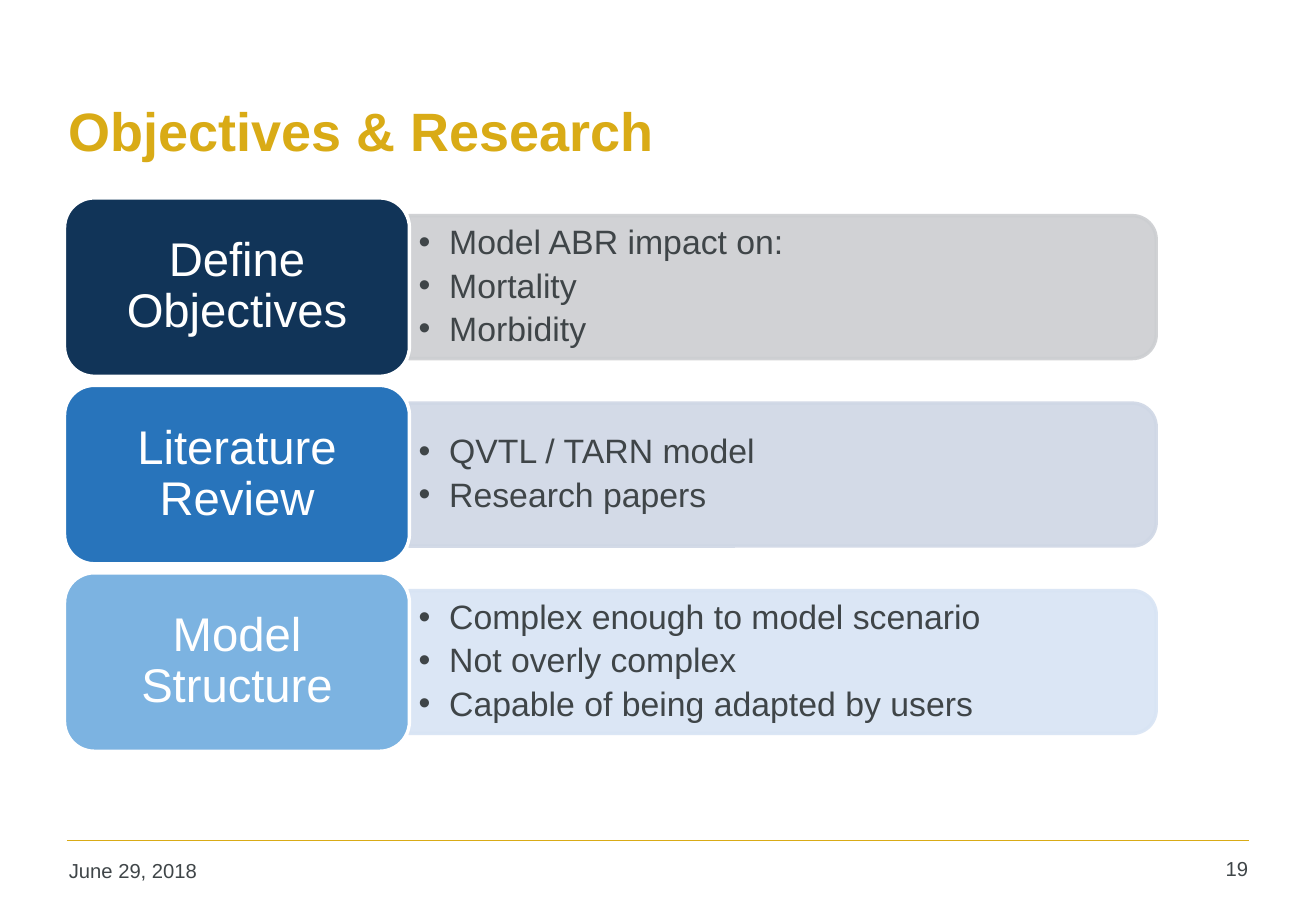
"""Builds the Objectives & Research slide: three labelled rows with bullet panels."""
from lxml import etree
from pptx import Presentation
from pptx.dml.color import RGBColor
from pptx.enum.shapes import MSO_CONNECTOR, MSO_SHAPE
from pptx.enum.text import MSO_ANCHOR, PP_ALIGN
from pptx.oxml.ns import qn
from pptx.util import Cm, Pt

LEFT, CENTER, RIGHT = PP_ALIGN.LEFT, PP_ALIGN.CENTER, PP_ALIGN.RIGHT
TOP, MIDDLE = MSO_ANCHOR.TOP, MSO_ANCHOR.MIDDLE
ROUND_RECT, ROUND_2_SAME = MSO_SHAPE.ROUNDED_RECTANGLE, MSO_SHAPE.ROUND_2_SAME_RECTANGLE
STRAIGHT = MSO_CONNECTOR.STRAIGHT

FONT = "Arial"
COLORS = {
    "gold": "D9AB16", "text": "3F4548", "white": "FFFFFF",
    "navy": "113458", "blue": "2874BB", "sky": "7CB3E1",
    "gray": "CCCED1", "mist": "CFD7E5", "ice": "D8E4F4",
}
ROWS = [
    ("Define Objectives", "navy", "gray",
     ["Model ABR impact on:", "Mortality", "Morbidity"]),
    ("Literature Review", "blue", "mist",
     ["QVTL / TARN model", "Research papers"]),
    ("Model Structure", "sky", "ice",
     ["Complex enough to model scenario", "Not overly complex",
      "Capable of being adapted by users"]),
]
ROW_TOP, ROW_PITCH = 4.14, 3.92
LABEL_LEFT, LABEL_W, LABEL_H = 1.35, 7.21, 3.73
PANEL_LEFT, PANEL_W, PANEL_H = 8.55, 15.62, 2.99
BULLETS_W, BULLETS_H = 15.47, 2.7


def rgb(name):
    return RGBColor.from_string(COLORS[name])


def set_frame(tf, anchor, inset_x, inset_y):
    tf.word_wrap = True
    tf.vertical_anchor = anchor
    tf.margin_left = tf.margin_right = Cm(inset_x)
    tf.margin_top = tf.margin_bottom = Cm(inset_y)


def add_run(p, text, size, color, bold=False):
    r = p.add_run()
    r.text = text
    r.font.name = FONT
    r.font.size = Pt(size)
    r.font.bold = bold
    r.font.color.rgb = rgb(color)


def add_text(s, box, text, size, color, align=LEFT, anchor=TOP, bold=False):
    tf = s.shapes.add_textbox(*map(Cm, box)).text_frame
    set_frame(tf, anchor, 0.25, 0.13)
    p = tf.paragraphs[0]
    p.alignment = align
    add_run(p, text, size, color, bold)


def add_box(s, kind, box, fill, line):
    sp = s.shapes.add_shape(kind, *map(Cm, box))
    sp.shadow.inherit = False
    sp.fill.solid()
    sp.fill.fore_color.rgb = rgb(fill)
    sp.line.color.rgb = rgb(line)
    sp.line.width = Pt(2)
    return sp


def add_panel(s, center_y, color):
    left = PANEL_LEFT + (PANEL_W - PANEL_H) / 2
    sp = add_box(s, ROUND_2_SAME, (left, center_y - PANEL_W / 2, PANEL_H, PANEL_W),
                 color, color)
    sp.rotation = 90
    for clr in sp._element.spPr.iter(qn("a:srgbClr")):
        etree.SubElement(clr, qn("a:alpha"), val="90000")


def add_bullets(s, center_y, items):
    box = (PANEL_LEFT, center_y - BULLETS_H / 2, BULLETS_W, BULLETS_H)
    tf = s.shapes.add_textbox(*map(Cm, box)).text_frame
    set_frame(tf, MIDDLE, 0.2, 0.1)
    for i, item in enumerate(items):
        p = tf.paragraphs[0] if i == 0 else tf.add_paragraph()
        pPr = p._p.get_or_add_pPr()
        pPr.set("marL", str(Cm(0.64)))
        pPr.set("indent", str(-Cm(0.64)))
        etree.SubElement(pPr, qn("a:buFont"), typeface=FONT)
        etree.SubElement(pPr, qn("a:buChar"), char="•")
        p.line_spacing = 0.9
        p.space_after = Pt(4)
        add_run(p, item, 20, "text")


def add_label(s, top, text, color):
    sp = add_box(s, ROUND_RECT, (LABEL_LEFT, top, LABEL_W, LABEL_H), color, "white")
    tf = sp.text_frame
    set_frame(tf, MIDDLE, 0.3, 0.15)
    p = tf.paragraphs[0]
    p.alignment = CENTER
    p.line_spacing = 0.9
    add_run(p, text, 28, "white")


def add_rule(s, x1, x2, y):
    line = s.shapes.add_connector(STRAIGHT, Cm(x1), Cm(y), Cm(x2), Cm(y))
    line.line.color.rgb = rgb("gold")
    line.line.width = Pt(1)
    etree.SubElement(line._element.spPr, qn("a:effectLst"))


def main():
    prs = Presentation()
    prs.slide_width, prs.slide_height = Cm(27.51), Cm(19.05)
    s = prs.slides.add_slide(prs.slide_layouts[6])
    add_rule(s, 1.4, 26.11, 17.58)
    add_text(s, (1.19, 1.12, 24.94, 3.18), "Objectives & Research", 32, "gold",
             anchor=MIDDLE, bold=True)
    add_text(s, (1.19, 17.81, 6.07, 0.91), "June 29, 2018", 12, "text")
    add_text(s, (24.38, 17.78, 1.96, 0.94), "19", 12, "text", align=RIGHT)
    for i, (label, label_color, panel_color, items) in enumerate(ROWS):
        top = ROW_TOP + i * ROW_PITCH
        center_y = top + LABEL_H / 2
        add_panel(s, center_y, panel_color)
        add_bullets(s, center_y, items)
        add_label(s, top, label, label_color)
    prs.save("out.pptx")


if __name__ == "__main__":
    main()
